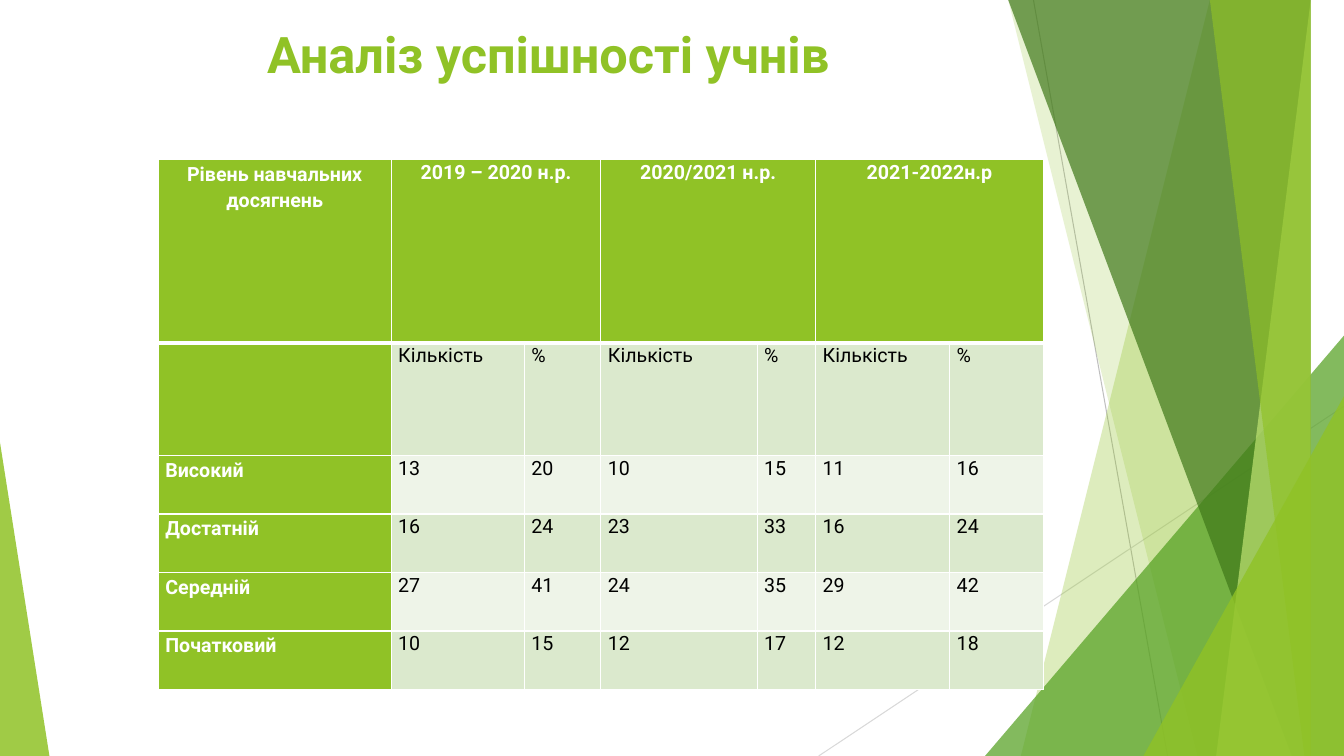
"""Build the slide that compares pupils' results over three school years."""
from lxml.etree import SubElement, fromstring
from pptx import Presentation
from pptx.dml.color import RGBColor
from pptx.enum.shapes import MSO_CONNECTOR, MSO_SHAPE
from pptx.enum.text import PP_ALIGN
from pptx.oxml.ns import qn
from pptx.util import Inches, Pt

THEME = {
    "lime": "90C226", "green": "54A021", "forest": "3F7819", "pale": "C0E474",
    "white": "FFFFFF", "black": "000000", "bands": ("EEF4E8", "DBE9CD"),
    "grey": "BFBFBF", "light_grey": "D9D9D9",
    "font": "Roboto", "title": Pt(36), "body": Pt(14),
}
COLUMNS, ROWS = 13.33, 7.5
UNIT = Inches(1)


def paint(shape, colour, opacity):
    """Give a shape a translucent fill without line or shadow."""
    shape.shadow.inherit = False
    shape.line.fill.background()
    shape.fill.solid()
    shape.fill.fore_color.rgb = RGBColor.from_string(colour)
    tint = shape.fill._xPr.find(qn("a:solidFill"))[0]
    SubElement(tint, qn("a:alpha"), val=str(opacity * 1000))


def write(para, text, colour, size, bold, layout):
    """Fill a paragraph with one formatted span."""
    span = para.add_run()
    span.text = text
    span.font.color.rgb = RGBColor.from_string(colour)
    for name, value in {"name": THEME["font"], "size": size, "bold": bold}.items():
        setattr(span.font, name, value)
    for name, value in layout.items():
        setattr(para, name, value)


deck = Presentation()
deck.slide_width, deck.slide_height = int(COLUMNS * UNIT), int(ROWS * UNIT)
page = deck.slides.add_slide(deck.slide_layouts[6])

for start, end, colour in (
    ((10.25, 0), (11.58, ROWS), THEME["grey"]),
    ((COLUMNS, 4.03), (8.12, ROWS), THEME["light_grey"]),
):
    line = page.shapes.add_connector(
        MSO_CONNECTOR.STRAIGHT, *(int(place * UNIT) for place in start + end))
    line.line.color.rgb = RGBColor.from_string(colour)
    line.line.width = Pt(0.75)
    SubElement(line._element.spPr, qn("a:effectLst"))

facets = (
    ("band", 12.28, 10.04, "lime", 30),
    ("band", 10.5, 11.83, "lime", 20),
    ("triangle", (9.77, 3.33, 3.56), 1, "green", 72),
    ("band", 10.21, 12.91, "forest", 70),
    ("band", 13.03, 11.92, "pale", 70),
    ("band", 11.96, 13.18, "lime", 65),
    ("triangle", (11.34, 3.93, 1.99), 1, "lime", 80),
    ("triangle", (0, 4.39, 0.49), 0, "lime", 85),
)
for kind, first, second, colour, opacity in facets:
    if kind == "band":
        outline = page.shapes.build_freeform(first, -0.01, scale=UNIT)
        outline.add_line_segments(
            [(COLUMNS, -0.01), (COLUMNS, ROWS), (second, ROWS)], close=True)
        facet = outline.convert_to_shape()
    else:
        left, top, width = first
        facet = page.shapes.add_shape(
            MSO_SHAPE.ISOSCELES_TRIANGLE,
            *(int(length * UNIT) for length in (left, top, width, ROWS - top)))
        facet.adjustments[0] = second
    paint(facet, THEME[colour], opacity)

box = page.shapes.add_textbox(
    *(int(length * UNIT) for length in (0.74, 0.14, 9.4, 1.44)))
box.text_frame.word_wrap = True
box.text_frame.margin_top = int(0.09 * UNIT)
write(box.text_frame.paragraphs[0], "Аналіз успішності учнів", THEME["lime"],
      THEME["title"], True, {"alignment": PP_ALIGN.CENTER})

widths = (2.31, 1.32, 0.76, 1.55, 0.58, 1.33, 0.93)
heights = (1.82, 1.12) + (0.58,) * 4
results = (
    ("Рівень навчальних досягнень", "2019 – 2020 н.р.", "",
     "2020/2021 н.р.", "", "2021-2022н.р", ""),
    ("",) + ("Кількість", "%") * 3,
    ("Високий", "13", "20", "10", "15", "11", "16"),
    ("Достатній", "16", "24", "23", "33", "16", "24"),
    ("Середній", "27", "41", "24", "35", "29", "42"),
    ("Початковий", "10", "15", "12", "17", "12", "18"),
)
table = page.shapes.add_table(
    len(heights), len(widths),
    *(int(length * UNIT) for length in (1.57, 1.58, sum(widths), sum(heights)))).table
table.first_row = table.horz_banding = False
for column, width in zip(table.columns, widths):
    column.width = int(width * UNIT)
for row, height in zip(table.rows, heights):
    row.height = int(height * UNIT)
for year in (1, 3, 5):
    table.cell(0, year).merge(table.cell(0, year + 1))

margins = {"margin_left": int(0.07 * UNIT), "margin_right": int(0.07 * UNIT),
           "margin_top": 0, "margin_bottom": 0}
label_layout = {"line_spacing": 1.15}
value_layout = {"line_spacing": 1.07, "space_after": Pt(8)}
for r, values in enumerate(results):
    for c, text in enumerate(values):
        cell = table.cell(r, c)
        heading = r == 0 or c == 0
        for name, value in margins.items():
            setattr(cell, name, value)
        cell.fill.solid()
        cell.fill.fore_color.rgb = RGBColor.from_string(
            THEME["lime"] if heading else THEME["bands"][r % 2])
        if text:
            align = (PP_ALIGN.CENTER if r == 0
                     else PP_ALIGN.JUSTIFY if c == 0 else PP_ALIGN.LEFT)
            layout = label_layout if c == 0 else value_layout
            write(cell.text_frame.paragraphs[0], text,
                  THEME["white"] if heading else THEME["black"],
                  THEME["body"], heading, {**layout, "alignment": align})
        properties = cell._tc.get_or_add_tcPr()
        for place, side in enumerate("LRTB"):
            thick = (r, side) in ((0, "B"), (1, "T"))
            border = fromstring(
                f'<a:ln{side} xmlns:a="http://schemas.openxmlformats.org/drawingml/2006/main"'
                f' w="{Pt(3 if thick else 1)}"><a:solidFill>'
                f'<a:srgbClr val="{THEME["white"]}"/></a:solidFill></a:ln{side}>')
            properties.insert(place, border)

deck.save("out.pptx")
